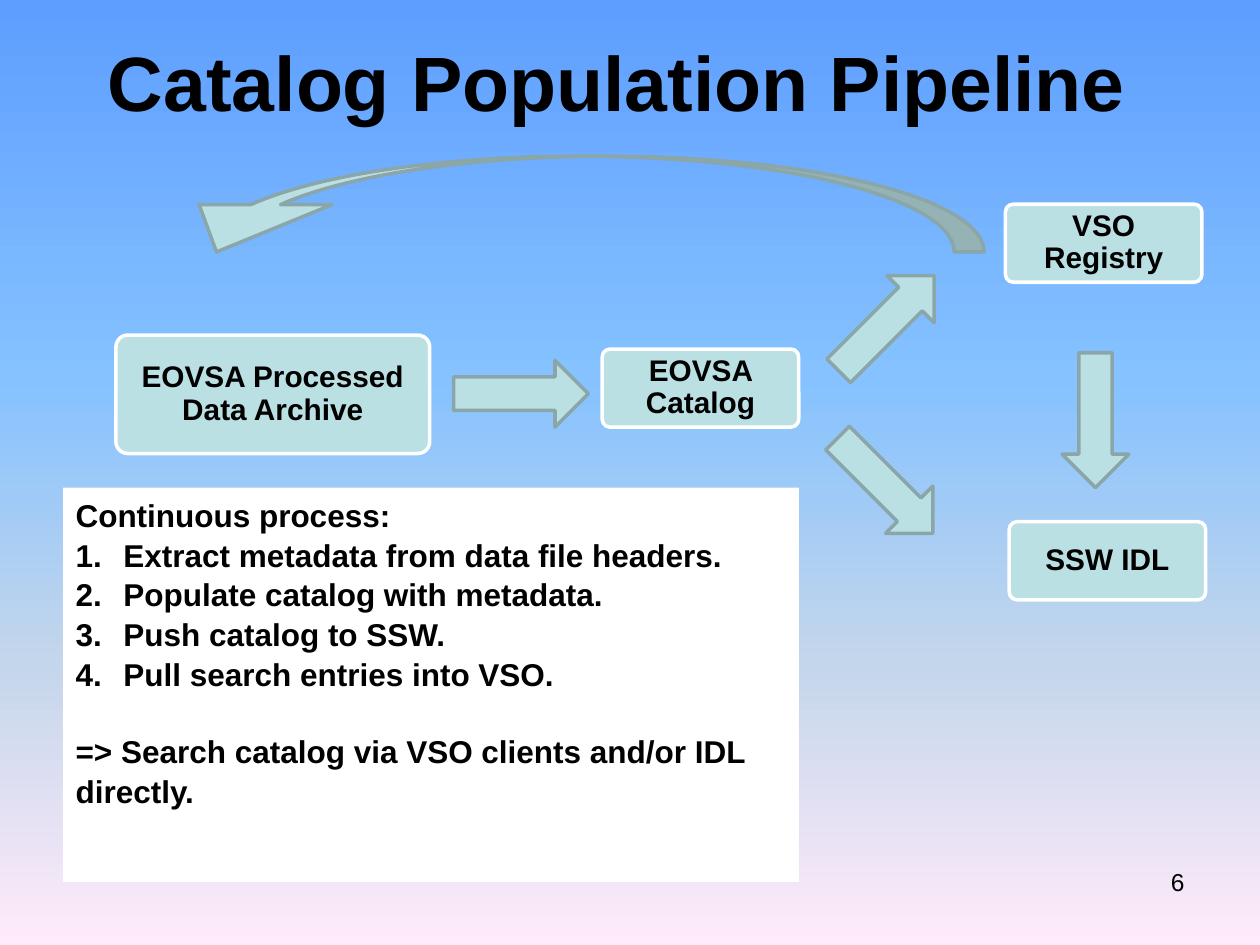
from lxml import etree
from pptx import Presentation
from pptx import util as u
from pptx.dml.color import RGBColor
from pptx.enum import shapes, text
from pptx.oxml.ns import qn

COLORS = {"black": "000000", "white": "FFFFFF", "teal": "BBE0E3", "edge": "8AA6A8"}
SKY = [(0, "5E9EFF"), (40, "85C2FF"), (70, "C4D6EB"), (100, "FFEBFA")]
SHAPE = shapes.MSO_SHAPE


def add_block(kind, box, line):
    sp = s.shapes.add_shape(kind, *map(u.Inches, box))
    sp.shadow.inherit = False
    sp.fill.solid()
    sp.fill.fore_color.rgb = RGBColor.from_string(COLORS["teal"])
    sp.line.color.rgb = RGBColor.from_string(COLORS[line])
    sp.line.width = u.Pt(2)
    return sp


def format_text(tf, size, bold, align):
    for p in tf.paragraphs:
        p.alignment = align
        for r in p.runs:
            r.font.name = "Arial"
            r.font.size = u.Pt(size)
            r.font.bold = bold
            r.font.color.rgb = RGBColor.from_string(COLORS["black"])


prs = Presentation()
prs.slide_width, prs.slide_height = u.Inches(10), u.Inches(7.5)
s = prs.slides.add_slide(prs.slide_layouts[1])

fill = s.background.fill
fill.gradient()
fill.gradient_angle = 270
stops = next(s.element.iter(qn("a:gsLst")))
for stop in list(stops):
    stops.remove(stop)
for pos, color in SKY:
    stop = etree.SubElement(stops, qn("a:gs"), pos=str(pos * 1000))
    etree.SubElement(stop, qn("a:srgbClr"), val=color)

title = s.shapes.title
title.left, title.top, title.width, title.height = map(u.Inches, (0.4, 0.22, 9, 1.25))
tf = title.text_frame
tf.text = "Catalog Population Pipeline"
tf.vertical_anchor = text.MSO_ANCHOR.TOP
tf.auto_size = text.MSO_AUTO_SIZE.NONE
format_text(tf, 44, True, text.PP_ALIGN.CENTER)

nodes = [
    ("EOVSA Processed Data Archive", (0.92, 2.66, 2.49, 0.94)),
    ("SSW IDL", (8.01, 4.14, 1.56, 0.62)),
    ("EOVSA Catalog", (4.78, 2.77, 1.56, 0.62)),
    ("VSO Registry", (7.98, 1.62, 1.56, 0.62)),
]
for label, box in nodes:
    sp = add_block(SHAPE.ROUNDED_RECTANGLE, box, "white")
    sp.adjustments[0] = 0.1
    tf = sp.text_frame
    tf.text = label
    tf.word_wrap = True
    tf.vertical_anchor = text.MSO_ANCHOR.MIDDLE
    tf.margin_left = tf.margin_right = u.Inches(0.06)
    tf.margin_top = tf.margin_bottom = u.Inches(0.04)
    tf.paragraphs[0].line_spacing = 0.9
    format_text(tf, 17, True, text.PP_ALIGN.CENTER)

arrows = [
    (SHAPE.RIGHT_ARROW, (3.6, 2.86, 1.07, 0.53), 0),
    (SHAPE.RIGHT_ARROW, (6.5, 2.34, 1.07, 0.53), 315),
    (SHAPE.DOWN_ARROW, (8.43, 2.8, 0.53, 1.07), 0),
    (SHAPE.RIGHT_ARROW, (6.49, 3.55, 1.07, 0.53), 45),
]
arrows[1:2] = [(SHAPE.RIGHT_ARROW, (6.5, 2.3, 1.07, 0.53), 315)]
arrows[3:4] = [(SHAPE.RIGHT_ARROW, (6.49, 3.59, 1.07, 0.53), 45)]
for kind, box, angle in arrows:
    add_block(kind, box, "edge").rotation = angle

loop = add_block(SHAPE.CURVED_DOWN_ARROW, (1.19, 1.24, 6.62, 0.76), "edge")
for i, value in enumerate((0.313, 1.39, 0.494)):
    loop.adjustments[i] = value
loop.element.spPr.find(qn("a:xfrm")).set("flipH", "1")

steps = [
    "Extract metadata from data file headers.",
    "Populate catalog with metadata.",
    "Push catalog to SSW.",
    "Pull search entries into VSO.",
]
result = "=> Search catalog via VSO clients and/or IDL directly."
body = s.placeholders[1]
body.left, body.top, body.width, body.height = map(u.Inches, (0.5, 3.87, 5.84, 3.13))
body.fill.solid()
body.fill.fore_color.rgb = RGBColor.from_string(COLORS["white"])
tf = body.text_frame
tf.text = "\n".join(["Continuous process:", *steps, result])
tf.auto_size = text.MSO_AUTO_SIZE.NONE
for p in tf.paragraphs:
    numbered = p.text in steps
    p.line_spacing = 1.05
    p.space_before = u.Pt(21.7 if p.text == result else 0)
    indent = u.Inches(0.38) if numbered else 0
    pPr = p._p.get_or_add_pPr()
    pPr.set("marL", str(indent))
    pPr.set("indent", str(-indent))
    if numbered:
        etree.SubElement(pPr, qn("a:buFont"), typeface="+mj-lt")
        etree.SubElement(pPr, qn("a:buAutoNum"), type="arabicPeriod")
    else:
        etree.SubElement(pPr, qn("a:buNone"))
format_text(tf, 18, True, text.PP_ALIGN.LEFT)

number = s.shapes.add_textbox(*map(u.Inches, (7.17, 6.83, 2.33, 0.52)))
tf = number.text_frame
tf.word_wrap = True
tf.text = "6"
format_text(tf, 14, False, text.PP_ALIGN.RIGHT)

prs.save("out.pptx")
